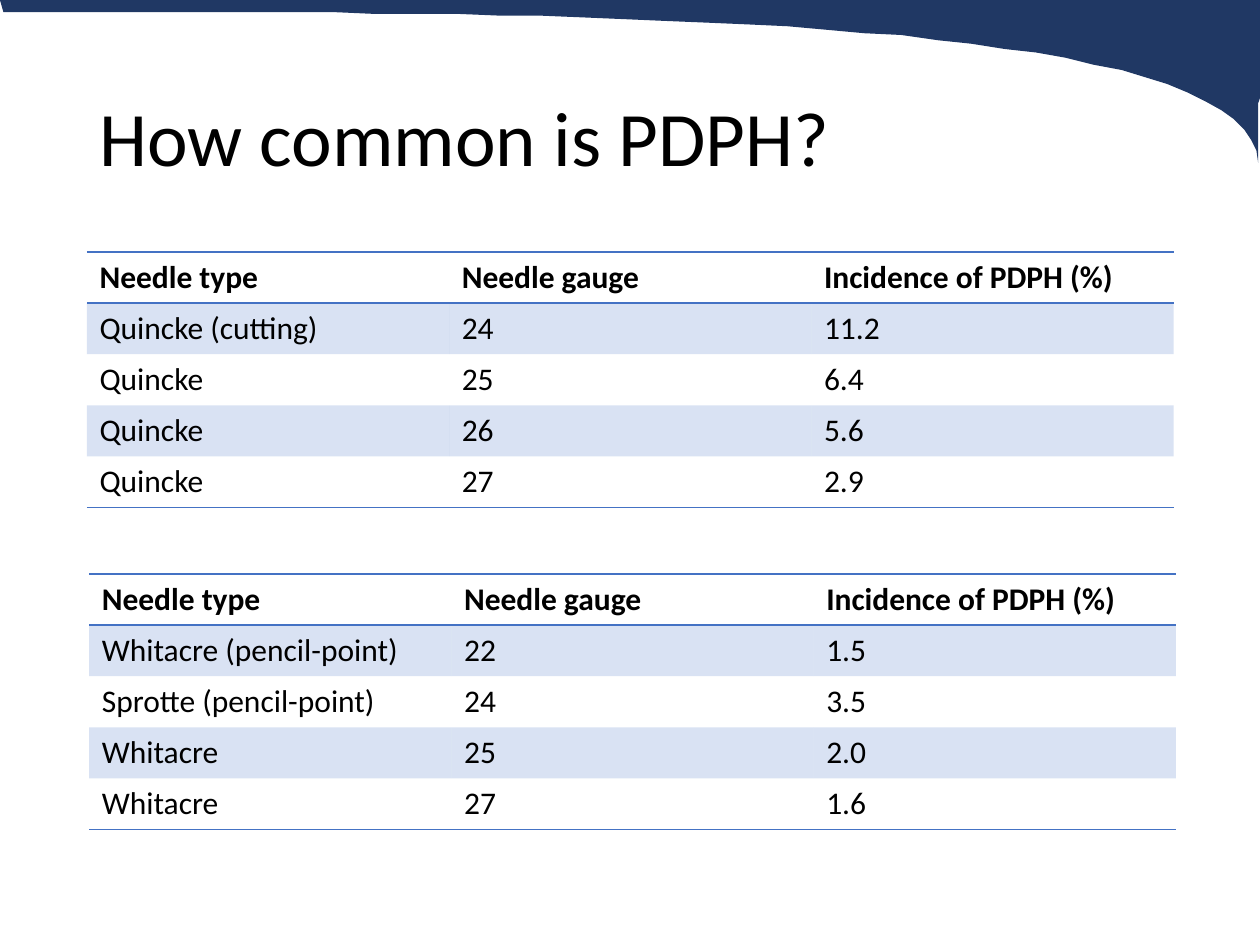
"""Build a slide with two tables of PDPH incidence by needle type."""
from lxml import etree
from pptx import Presentation
from pptx.dml.color import RGBColor
from pptx.enum.text import MSO_ANCHOR, PP_ALIGN
from pptx.oxml.ns import qn
from pptx.util import Pt

LEFT = PP_ALIGN.LEFT
MIDDLE = MSO_ANCHOR.MIDDLE
NO_GRID_STYLE = "{2D5ABB26-0587-4C30-8999-92F81FD0307C}"

TITLE = "How common is PDPH?"
HEADER = ("Needle type", "Needle gauge", "Incidence of PDPH (%)")
TABLES = [
    {
        "left": 49.7,
        "top": 144,
        "rows": [
            ("Quincke (cutting)", "24", "11.2"),
            ("Quincke", "25", "6.4"),
            ("Quincke", "26", "5.6"),
            ("Quincke", "27", "2.9"),
        ],
    },
    {
        "left": 51,
        "top": 328,
        "rows": [
            ("Whitacre (pencil-point)", "22", "1.5"),
            ("Sprotte (pencil-point)", "24", "3.5"),
            ("Whitacre", "25", "2.0"),
            ("Whitacre", "27", "1.6"),
        ],
    },
]
COLUMN_WIDTH, ROW_HEIGHT = 207, 29.2
SWOOSH_START = (720, 0)
SWOOSH_CURVES = [
    ((720, 10), (719.3, 83), (719, 93)),
    ((718.5, 0), (242, 7.2), (2.2, 7.2)),
]
CURVE_STEPS = 40
THEME = {
    "font": "Calibri",
    "title_size": 44,
    "table_size": 18,
    "text": "000000",
    "swoosh": "203864",
    "accent": "4472C4",
    "band_alpha": 20,
    "rule_width": 1,
}


def write(frame, text, size, bold=False, spacing=None):
    """Put one formatted, left-aligned paragraph in a text frame."""
    frame.text = text
    para = frame.paragraphs[0]
    para.alignment = LEFT
    if spacing:
        para.line_spacing = spacing
    para.font.name = THEME["font"]
    para.font.size = Pt(size)
    para.font.bold = bold
    para.font.color.rgb = RGBColor.from_string(THEME["text"])


def curve_points(start, first, second, end):
    """Return points along a cubic curve, leaving out its start."""
    points = []
    for step in range(1, CURVE_STEPS + 1):
        t = step / CURVE_STEPS
        weights = ((1 - t) ** 3, 3 * t * (1 - t) ** 2, 3 * t**2 * (1 - t), t**3)
        corners = (start, first, second, end)
        points.append(tuple(
            sum(weight * corner[axis] for weight, corner in zip(weights, corners))
            for axis in (0, 1)
        ))
    return points


def add_swoosh(page):
    """Draw the curved corner band behind the title."""
    points = [SWOOSH_START]
    for curve in SWOOSH_CURVES:
        points += curve_points(points[-1], *curve)
    builder = page.shapes.build_freeform(0, 0, scale=Pt(1))
    builder.add_line_segments(points, close=True)
    swoosh = builder.convert_to_shape()
    swoosh.shadow.inherit = False
    swoosh.fill.solid()
    swoosh.fill.fore_color.rgb = RGBColor.from_string(THEME["swoosh"])
    swoosh.line.fill.background()
    page.shapes.title.element.addprevious(swoosh.element)


def add_rule(cell, side):
    """Add an accent border on one side of a cell."""
    properties = cell._tc.get_or_add_tcPr()
    rule = etree.SubElement(properties, qn(f"a:ln{side}"), w=str(Pt(THEME["rule_width"])))
    fill = etree.SubElement(rule, qn("a:solidFill"))
    etree.SubElement(fill, qn("a:srgbClr"), val=THEME["accent"])


def fill_band(cell):
    """Fill a cell with the translucent accent colour."""
    cell.fill.solid()
    cell.fill.fore_color.rgb = RGBColor.from_string(THEME["accent"])
    color = cell._tc.tcPr.find(f".//{qn('a:solidFill')}[last()]/{qn('a:srgbClr')}")
    etree.SubElement(color, qn("a:alpha"), val=str(THEME["band_alpha"] * 1000))


def add_needle_table(page, left, top, rows):
    """Add a ruled table with a bold header and alternate shaded rows."""
    content = [HEADER, *rows]
    frame = page.shapes.add_table(
        len(content), len(HEADER), Pt(left), Pt(top),
        Pt(COLUMN_WIDTH * len(HEADER)), Pt(ROW_HEIGHT * len(content)),
    )
    table = frame.table
    frame.element.find(f".//{qn('a:tableStyleId')}").text = NO_GRID_STYLE
    for column in table.columns:
        column.width = Pt(COLUMN_WIDTH)
    for row_index, values in enumerate(content):
        table.rows[row_index].height = Pt(ROW_HEIGHT)
        is_header = row_index == 0
        for column_index, value in enumerate(values):
            cell = table.cell(row_index, column_index)
            write(cell.text_frame, value, THEME["table_size"], bold=is_header)
            if is_header:
                add_rule(cell, "T")
            if is_header or row_index == len(rows):
                add_rule(cell, "B")
            if row_index % 2:
                fill_band(cell)
            else:
                cell.fill.background()


def main():
    """Assemble and save the deck."""
    deck = Presentation()
    deck.slide_width, deck.slide_height = Pt(720), Pt(540)
    page = deck.slides.add_slide(deck.slide_layouts[5])
    title = page.shapes.title
    title.left, title.top, title.width, title.height = Pt(49.5), Pt(28.75), Pt(621), Pt(104.4)
    title.text_frame.vertical_anchor = MIDDLE
    write(title.text_frame, TITLE, THEME["title_size"], spacing=0.9)
    add_swoosh(page)
    for table in TABLES:
        add_needle_table(page, **table)
    deck.save("out.pptx")


if __name__ == "__main__":
    main()
